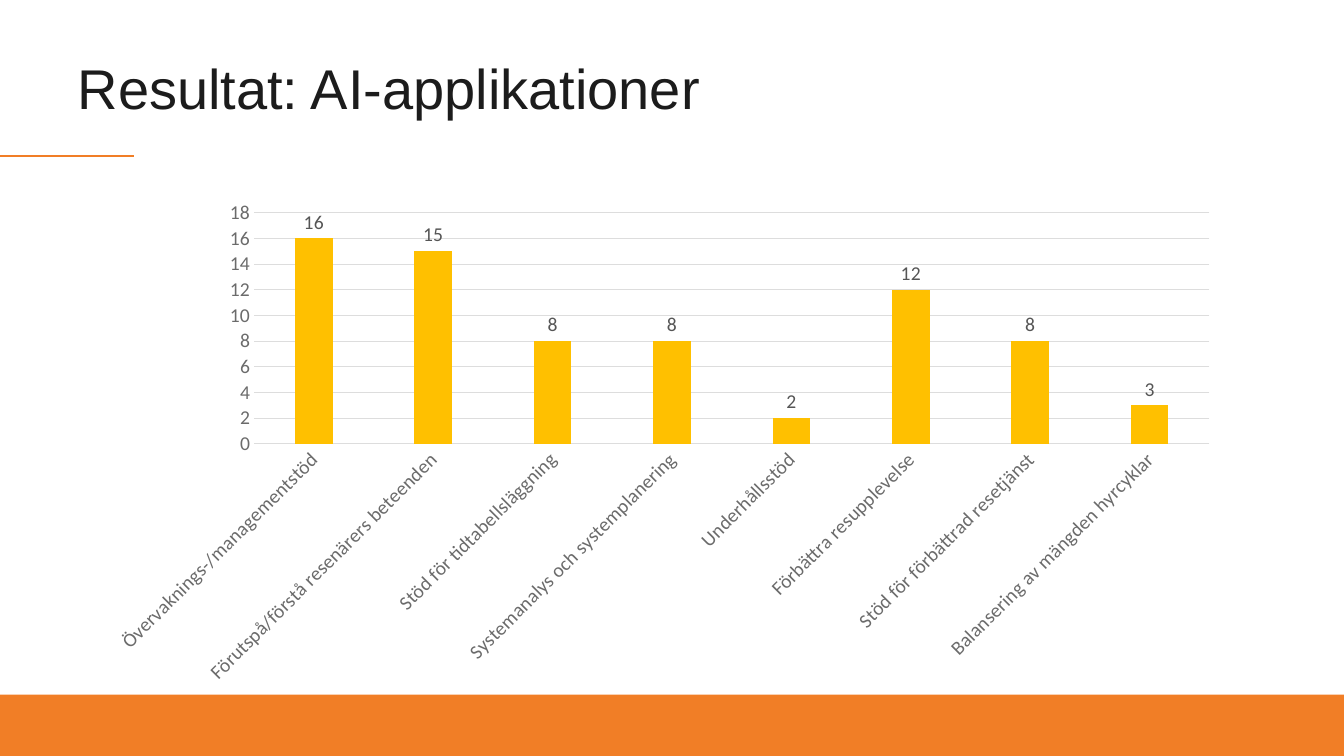
from pptx import Presentation
from pptx.chart.data import CategoryChartData
from pptx.dml.color import RGBColor
from pptx.enum.chart import XL_CHART_TYPE, XL_LABEL_POSITION, XL_TICK_MARK
from pptx.enum.shapes import MSO_CONNECTOR, MSO_SHAPE
from pptx.enum.text import MSO_ANCHOR, MSO_AUTO_SIZE, PP_ALIGN
from pptx.oxml.ns import qn
from pptx.util import Inches, Pt

COLUMN_CLUSTERED = XL_CHART_TYPE.COLUMN_CLUSTERED
OUTSIDE_END = XL_LABEL_POSITION.OUTSIDE_END
NO_TICK = XL_TICK_MARK.NONE
STRAIGHT = MSO_CONNECTOR.STRAIGHT
RECTANGLE = MSO_SHAPE.RECTANGLE
MIDDLE = MSO_ANCHOR.MIDDLE
NO_AUTOFIT = MSO_AUTO_SIZE.NONE
LEFT = PP_ALIGN.LEFT

ORANGE = RGBColor(0xF1, 0x7E, 0x26)
AMBER = RGBColor(0xFF, 0xC0, 0x00)
INK = RGBColor(0x1C, 0x1C, 0x1C)
LABEL_GREY = RGBColor(0x55, 0x55, 0x55)
AXIS_GREY = RGBColor(0x6B, 0x6B, 0x6B)
GRID_GREY = RGBColor(0xDD, 0xDD, 0xDD)

WIDTH, HEIGHT = Inches(13.33), Inches(7.5)
MARGIN = Inches(0.67)
FOOTER_TOP = Inches(6.89)
RULE_Y = Inches(1.55)
TITLE_TOP = Inches(0.3)
LABEL_ANGLE = -45

APPLICATIONS = {
    "Övervaknings-/managementstöd": 16,
    "Förutspå/förstå resenärers beteenden": 15,
    "Stöd för tidtabellsläggning": 8,
    "Systemanalys och systemplanering": 8,
    "Underhållsstöd": 2,
    "Förbättra resupplevelse": 12,
    "Stöd för förbättrad resetjänst": 8,
    "Balansering av mängden hyrcyklar": 3,
}


def set_font(font, size=14, color=INK, name="Calibri"):
    font.name = name
    font.size = Pt(size)
    font.bold = False
    font.color.rgb = color


def write_text(frame, text, spacing=1.0, **font_format):
    frame.word_wrap = True
    frame.auto_size = NO_AUTOFIT
    frame.vertical_anchor = MIDDLE
    frame.text = text
    paragraph = frame.paragraphs[0]
    paragraph.alignment = LEFT
    paragraph.line_spacing = spacing
    set_font(paragraph.runs[0].font, **font_format)


def add_footer_band(slide):
    band = slide.shapes.add_shape(RECTANGLE, 0, FOOTER_TOP, WIDTH, HEIGHT - FOOTER_TOP)
    band.shadow.inherit = False
    band.fill.solid()
    band.fill.fore_color.rgb = ORANGE
    band.line.fill.background()


def add_title_rule(slide):
    rule = slide.shapes.add_connector(STRAIGHT, 0, RULE_Y, WIDTH // 10, RULE_Y)
    rule.line.color.rgb = ORANGE
    rule.line.width = Pt(1.5)
    properties = rule._element.spPr
    properties.append(properties.makeelement(qn("a:effectLst"), {}))


def add_title(slide, text):
    title = slide.shapes.title
    title.left, title.top = MARGIN, TITLE_TOP
    title.width, title.height = WIDTH - 2 * MARGIN, RULE_Y - TITLE_TOP
    write_text(title.text_frame, text, spacing=0.8, size=40, name="Arial")


def style_axis(axis):
    axis.major_tick_mark = axis.minor_tick_mark = NO_TICK
    set_font(axis.tick_labels.font, color=AXIS_GREY)


def style_line(line):
    line.color.rgb = GRID_GREY
    line.width = Pt(0.75)


def add_applications_chart(slide):
    data = CategoryChartData()
    data.categories = list(APPLICATIONS)
    data.add_series("Series 1", list(APPLICATIONS.values()))
    chart = slide.shapes.add_chart(
        COLUMN_CLUSTERED, Inches(0.93), Inches(1.89), Inches(11.29), Inches(5), data
    ).chart
    chart.has_legend = chart.has_title = False
    set_font(chart.font)

    # Axes, with slanted category names
    names, counts = chart.category_axis, chart.value_axis
    for axis in (names, counts):
        style_axis(axis)
    style_line(names.format.line)
    names._element.find(qn("c:txPr")).find(qn("a:bodyPr")).set("rot", str(LABEL_ANGLE * 60000))
    counts.minimum_scale, counts.maximum_scale, counts.major_unit = 0, 18, 2
    counts.format.line.fill.background()
    counts.has_major_gridlines = True
    style_line(counts.major_gridlines.format.line)

    # Columns and their values
    plot = chart.plots[0]
    plot.vary_by_categories = False
    plot.gap_width, plot.overlap = 219, -27
    columns = plot.series[0]
    columns.format.fill.solid()
    columns.format.fill.fore_color.rgb = AMBER
    labels = columns.data_labels
    labels.show_value = True
    labels.position = OUTSIDE_END
    set_font(labels.font, color=LABEL_GREY)


def main():
    deck = Presentation()
    deck.slide_width, deck.slide_height = WIDTH, HEIGHT
    slide = deck.slides.add_slide(deck.slide_layouts[5])
    add_footer_band(slide)
    add_title_rule(slide)
    add_title(slide, "Resultat: AI-applikationer")
    add_applications_chart(slide)
    deck.save("out.pptx")


if __name__ == "__main__":
    main()
